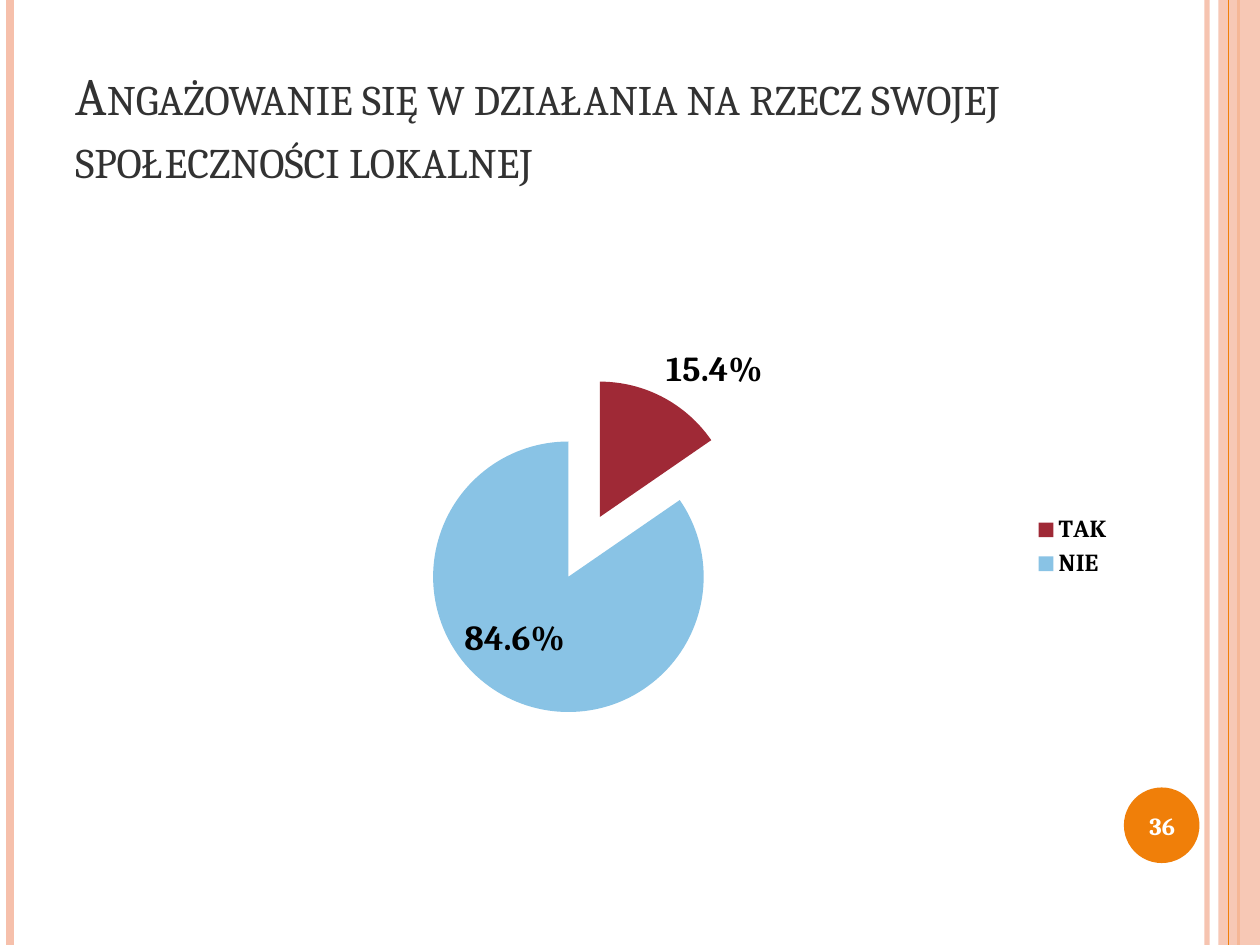
from pptx import Presentation
from pptx.chart.data import CategoryChartData
from pptx.dml.color import RGBColor
from pptx.enum.chart import XL_CHART_TYPE, XL_LABEL_POSITION, XL_LEGEND_POSITION
from pptx.enum.shapes import MSO_CONNECTOR, MSO_SHAPE
from pptx.enum.text import MSO_ANCHOR, PP_ALIGN
from pptx.oxml.ns import qn
from pptx.util import Inches, Pt
from lxml.etree import SubElement

FONT = "Cambria"
PEACH, ORANGE = "F6C0AB", "F07F09"
TITLE = "Angażowanie się w działania na rzecz swojej społeczności lokalnej"
PAGE = "36"
ANSWERS = [("TAK", 0.154, "9F2936"), ("NIE", 0.846, "89C3E5")]
EXPLOSION = 25
LEFT_RULES = [(9.58, PEACH, 3, 93), (0.08, PEACH, 4.5, 100), (9.83, ORANGE, 1.5, 100)]
BAND_RULE = (9.75, ORANGE, 0.75, 100)
SHAPES = [
    (MSO_SHAPE.RECTANGLE, (9.67, 0, 0.33, 7.5), PEACH, 87),
    (MSO_SHAPE.OVAL, (8.92, 6.25, 0.6, 0.6), ORANGE, 100),
]
TITLE_FONT = {"size": Pt(30), "name": FONT}
PAGE_FONT = {"size": Pt(14), "name": FONT, "bold": True}
CHART_FONT = {"size": Pt(10), "name": FONT}
LEGEND_FONT = {"size": Pt(14), "name": FONT, "bold": True}
LABEL_FONT = {"size": Pt(20), "name": FONT, "bold": True}


def rgb(color):
    return RGBColor.from_string(color)


def box(*inches):
    return [Inches(v) for v in inches]


def set_font(font, values, color):
    for name, value in values.items():
        setattr(font, name, value)
    font.color.rgb = rgb(color)


def set_fill(fill, color, opacity):
    fill.solid()
    fill.fore_color.rgb = rgb(color)
    if opacity < 100:
        clr = fill._xPr.find(qn("a:solidFill"))[0]
        SubElement(clr, qn("a:alpha")).set("val", str(opacity * 1000))


def add_rule(s, x, color, width, opacity):
    ln = s.shapes.add_connector(MSO_CONNECTOR.STRAIGHT, *box(x, 0, x, 7.5))
    ln.line.width = Pt(width)
    set_fill(ln.line.fill, color, opacity)
    SubElement(ln._element.spPr, qn("a:effectLst"))


def add_shape(s, kind, at, color, opacity):
    sp = s.shapes.add_shape(kind, *box(*at))
    sp.shadow.inherit = False
    sp.line.fill.background()
    set_fill(sp.fill, color, opacity)


def add_text(s, at, text, values, color, anchor, align):
    tf = s.shapes.add_textbox(*box(*at)).text_frame
    tf.word_wrap = True
    tf.vertical_anchor = anchor
    p = tf.paragraphs[0]
    p.alignment = align
    r = p.add_run()
    r.text = text
    set_font(r.font, values, color)
    return r


def add_pie(s, at):
    data = CategoryChartData(number_format="0.0%")
    data.categories = [name for name, _, _ in ANSWERS]
    data.add_series("Series 1", [value for _, value, _ in ANSWERS])
    chart = s.shapes.add_chart(XL_CHART_TYPE.PIE, *box(*at), data).chart
    chart.has_title = False
    set_font(chart.font, CHART_FONT, "000000")
    chart.has_legend = True
    chart.legend.position = XL_LEGEND_POSITION.RIGHT
    chart.legend.include_in_layout = False
    set_font(chart.legend.font, LEGEND_FONT, "000000")
    plot = chart.plots[0]
    plot.vary_by_categories = True
    series = plot.series[0]
    explosion = series._element.makeelement(qn("c:explosion"), {"val": str(EXPLOSION)})
    series._element.find(qn("c:tx")).addnext(explosion)
    for i, (_, _, color) in enumerate(ANSWERS):
        set_fill(series.points[i].format.fill, color, 100)
        point = series._element.findall(qn("c:dPt"))[i]
        mark = point.makeelement(qn("c:explosion"), {"val": str(EXPLOSION)})
        point.find(qn("c:spPr")).addprevious(mark)
    labels = series.data_labels
    labels.show_value = True
    labels.show_percentage = False
    labels.number_format = "0.0%"
    labels.number_format_is_linked = False
    labels.position = XL_LABEL_POSITION.BEST_FIT
    set_font(labels.font, LABEL_FONT, "000000")


def main():
    prs = Presentation()
    prs.slide_width, prs.slide_height = box(10, 7.5)
    s = prs.slides.add_slide(prs.slide_layouts[6])
    for rule in LEFT_RULES:
        add_rule(s, *rule)
    band, badge = SHAPES
    add_shape(s, *band)
    add_rule(s, *BAND_RULE)
    add_shape(s, *badge)
    r = add_text(s, (0.5, 0.3, 8.17, 1.25), TITLE, TITLE_FONT, "323232",
                 MSO_ANCHOR.BOTTOM, PP_ALIGN.LEFT)
    r.font._element.set("cap", "small")
    add_pie(s, (1.06, 2.57, 7.87, 3.54))
    add_text(s, (8.89, 6.27, 0.67, 0.57), PAGE, PAGE_FONT, "FFFFFF",
             MSO_ANCHOR.MIDDLE, PP_ALIGN.CENTER)
    prs.save("out.pptx")


if __name__ == "__main__":
    main()
